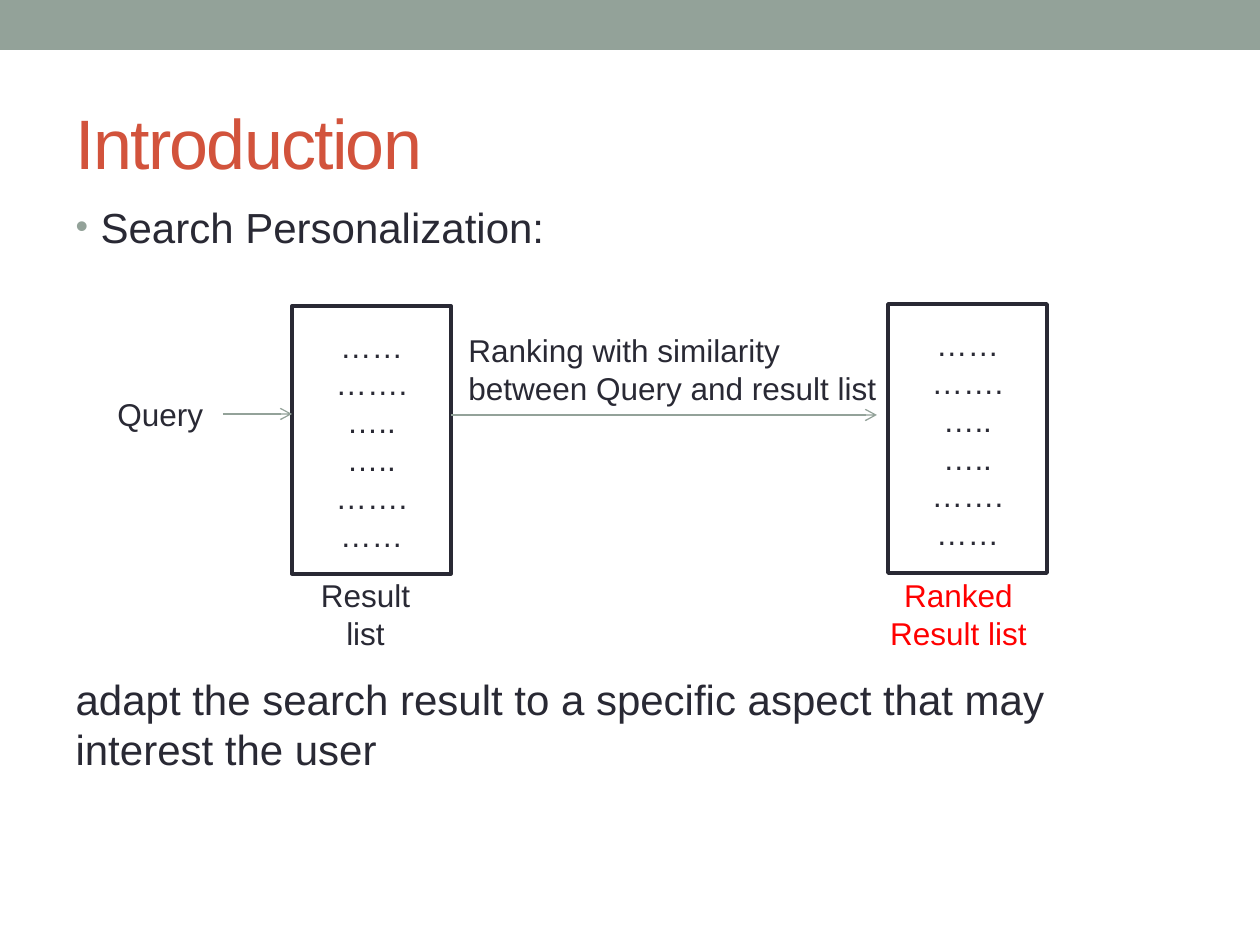
from dataclasses import dataclass

from lxml import etree
from pptx import Presentation
from pptx import util as u
from pptx.dml.color import RGBColor
from pptx.enum import shapes, text
from pptx.oxml.ns import qn

PX = 914400 // 126
INK, SAGE, RUST, RED, WHITE = "292934", "93A299", "D2533C", "FF0000", "FFFFFF"
RESULTS = ["……", "…….", "…..", "…..", "…….", "……"]


@dataclass
class Area:
    x: int
    y: int
    w: int
    h: int

    def emu(self) -> list[int]:
        return [v * PX for v in (self.x, self.y, self.w, self.h)]


@dataclass
class Panel:
    area: Area
    lines: list[str]
    color: str = INK
    outline: bool = False


PANELS = [
    Panel(Area(292, 306, 159, 268), RESULTS, outline=True),
    Panel(Area(888, 304, 159, 269), RESULTS, outline=True),
    Panel(Area(292, 585, 147, 57), ["Result list"]),
    Panel(Area(867, 585, 183, 57), ["Ranked Result list"], RED),
]


def rgb(value: str) -> RGBColor:
    return RGBColor.from_string(value)


def write(tf, lines: list[str], size: int, color: str, align=text.PP_ALIGN.LEFT) -> None:
    tf.word_wrap = True
    for i, line in enumerate(lines):
        p = tf.paragraphs[0] if i == 0 else tf.add_paragraph()
        p.text = line
        p.alignment = align
        p.font.name, p.font.size = "Arial", u.Pt(size)
        p.font.color.rgb = rgb(color)


def place(sp, area: Area) -> None:
    sp.left, sp.top, sp.width, sp.height = area.emu()


def add_rect(s, area: Area, fill: str):
    sp = s.shapes.add_shape(shapes.MSO_SHAPE.RECTANGLE, *area.emu())
    sp.shadow.inherit = False
    sp.fill.solid()
    sp.fill.fore_color.rgb = rgb(fill)
    sp.line.fill.background()
    return sp


def add_panel(s, panel: Panel) -> None:
    sp = add_rect(s, panel.area, WHITE)
    if panel.outline:
        sp.line.color.rgb = rgb(INK)
        sp.line.width = u.Pt(2.08)
    sp.text_frame.vertical_anchor = text.MSO_ANCHOR.MIDDLE
    write(sp.text_frame, panel.lines, 18, panel.color, text.PP_ALIGN.CENTER)


def add_label(s, area: Area, label: str):
    sp = s.shapes.add_textbox(*area.emu())
    write(sp.text_frame, [label], 18, INK)
    sp.text_frame.auto_size = text.MSO_AUTO_SIZE.SHAPE_TO_FIT_TEXT
    return sp


def add_arrow(s, x1: int, y1: int, x2: int, y2: int):
    cn = s.shapes.add_connector(
        shapes.MSO_CONNECTOR.STRAIGHT, *(v * PX for v in (x1, y1, x2, y2)))
    cn.line.color.rgb = rgb(SAGE)
    cn.line.width = u.Pt(0.75)
    etree.SubElement(cn.line._get_or_add_ln(), qn("a:tailEnd"), type="arrow")
    etree.SubElement(cn._element.spPr, qn("a:effectLst"))
    return cn


def add_bullet(p) -> None:
    pPr = p._p.get_or_add_pPr()
    pPr.set("marL", str(25 * PX))
    pPr.set("indent", str(-25 * PX))
    color = etree.Element(qn("a:buClr"))
    etree.SubElement(color, qn("a:srgbClr"), val=SAGE)
    size = etree.Element(qn("a:buSzPct"), val="85000")
    char = etree.Element(qn("a:buChar"), char="•")
    for el in (color, size, char):
        pPr.find(qn("a:defRPr")).addprevious(el)


def remove_bullet(p) -> None:
    pPr = p._p.get_or_add_pPr()
    pPr.set("marL", "0")
    pPr.set("indent", "0")
    pPr.find(qn("a:defRPr")).addprevious(etree.Element(qn("a:buNone")))


def fill_placeholders(s) -> None:
    title, body = s.placeholders
    place(title, Area(63, 73, 1134, 136))
    write(title.text_frame, ["Introduction"], 40, RUST)
    title.text_frame.vertical_anchor = text.MSO_ANCHOR.MIDDLE
    title.text_frame.paragraphs[0].runs[0].font._element.set("spc", "-100")

    place(body, Area(63, 195, 1134, 698))
    write(body.text_frame, [
        "Search Personalization:",
        "adapt the search result to a specific aspect that may interest the user",
    ], 24, INK)
    for sp in (title, body):
        sp.text_frame.auto_size = text.MSO_AUTO_SIZE.NONE
    heading, summary = body.text_frame.paragraphs
    add_bullet(heading)
    remove_bullet(summary)
    summary.space_before = u.Pt(241)


def main() -> None:
    prs = Presentation()
    prs.slide_width, prs.slide_height = u.Inches(10), u.Inches(7.5)
    s = prs.slides.add_slide(prs.slide_layouts[1])
    fill_placeholders(s)
    add_rect(s, Area(0, 0, 1260, 50), SAGE)
    for panel in PANELS:
        add_panel(s, panel)
    query = add_label(s, Area(105, 389, 118, 50), "Query")
    add_label(s, Area(456, 325, 462, 89), "Ranking with similarity between Query and result list")
    add_arrow(s, 223, 414, 292, 414).begin_connect(query, 3)
    add_arrow(s, 451, 415, 877, 415)
    prs.save("out.pptx")


if __name__ == "__main__":
    main()
